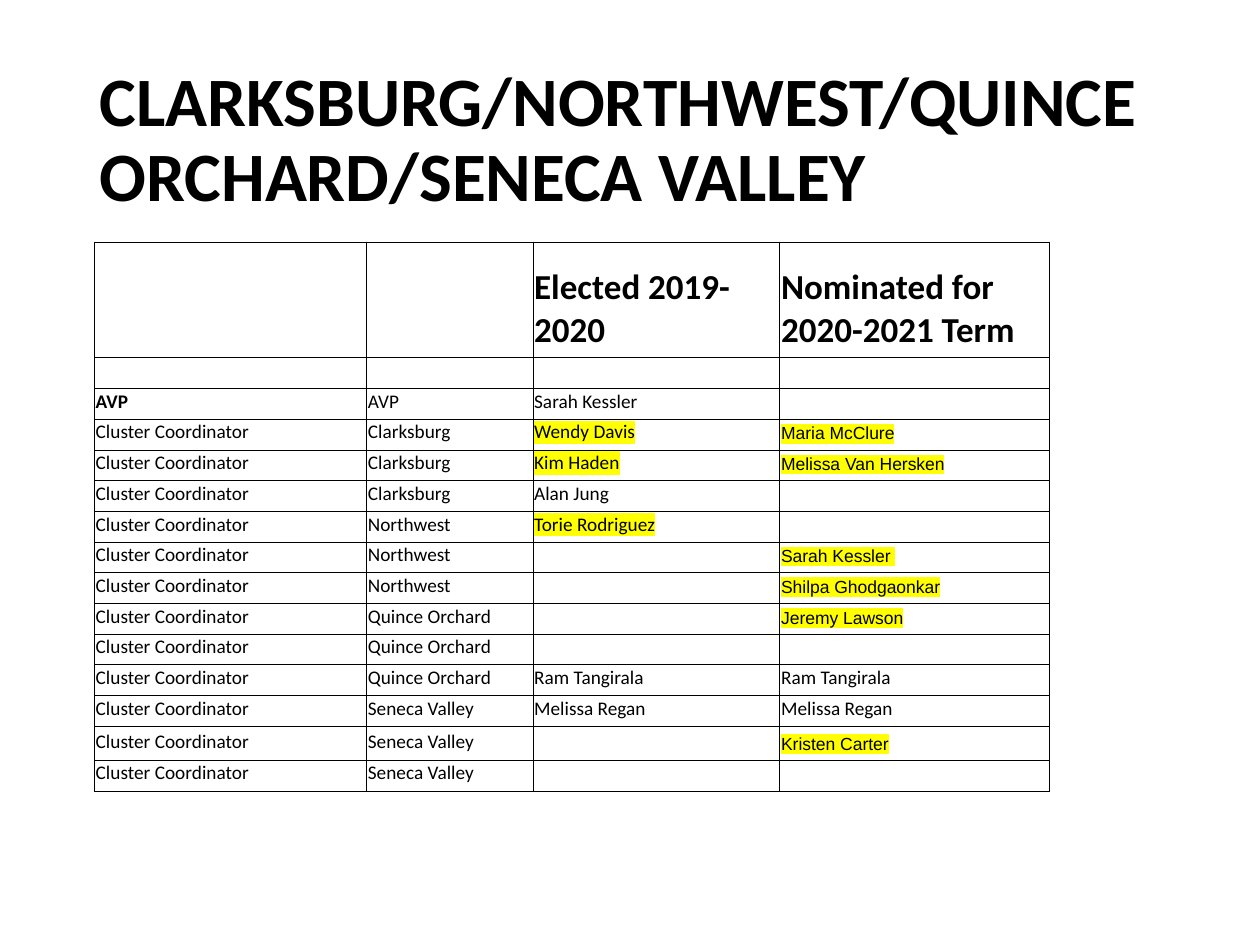
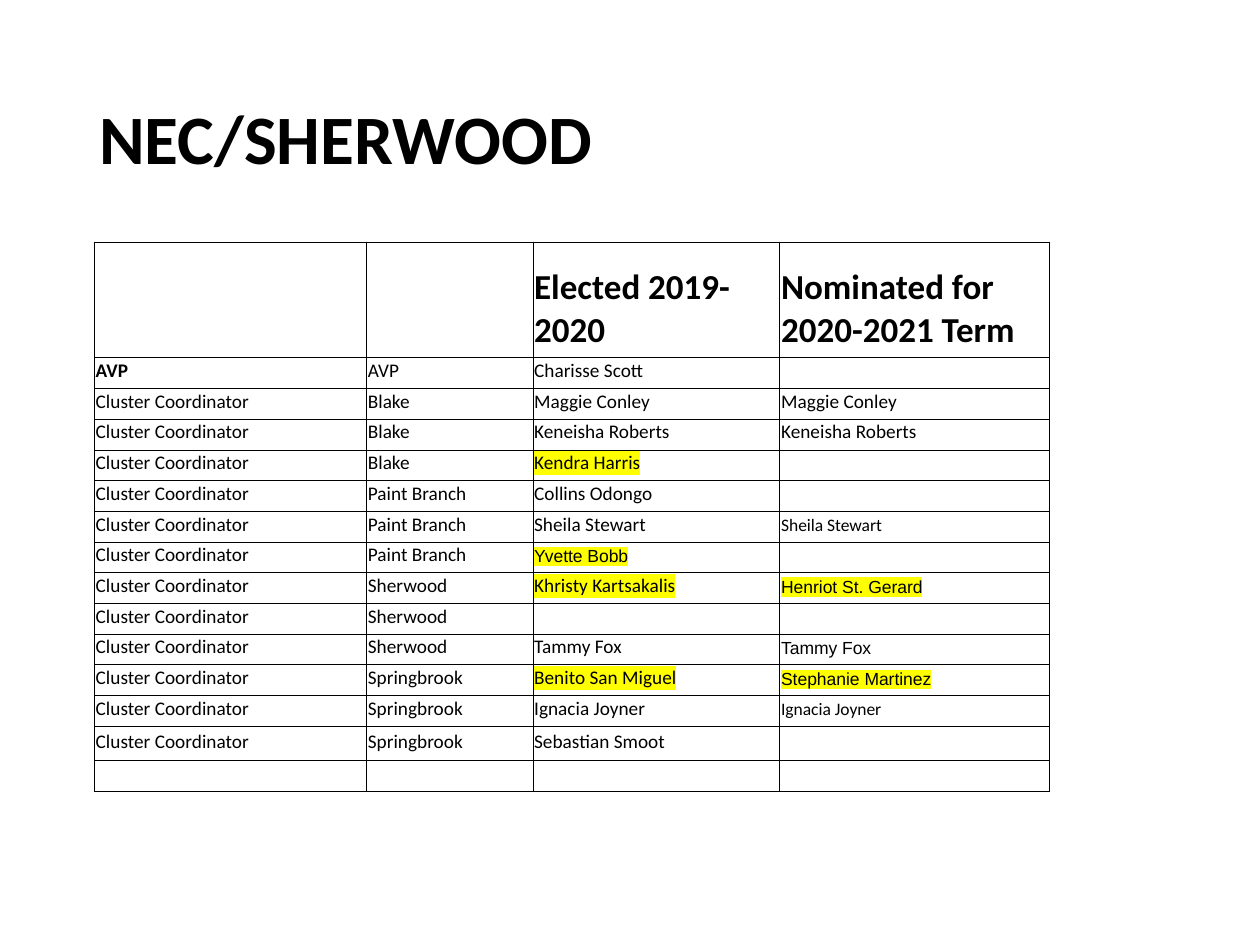
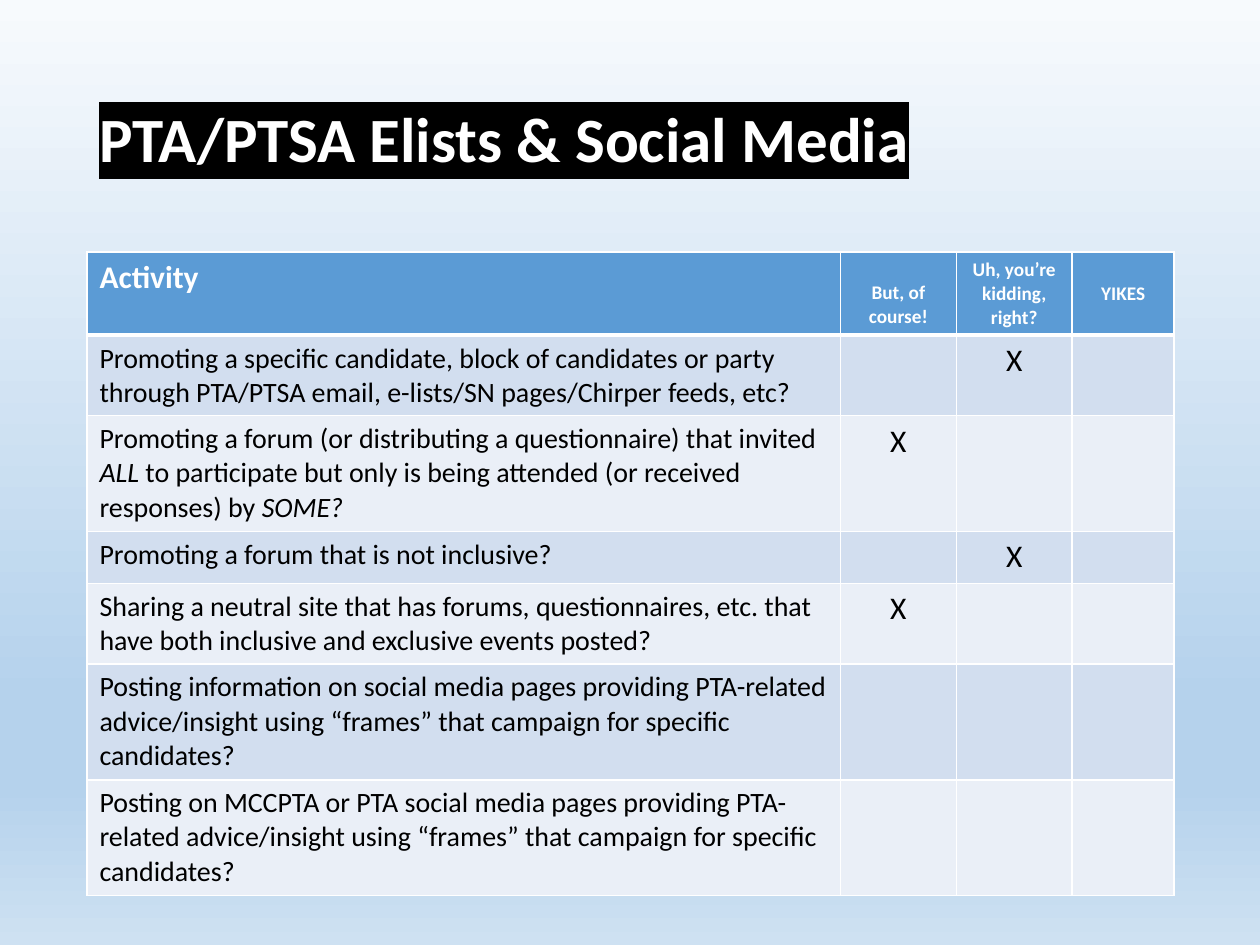
from dataclasses import dataclass
from lxml.etree import SubElement as Sub
from pptx import Presentation
from pptx.dml.color import RGBColor as RGB
from pptx.enum.text import MSO_ANCHOR as Anchor, PP_ALIGN as Align
from pptx.oxml.ns import qn
from pptx.util import Inches, Pt


@dataclass(frozen=True)
class Theme:
    sans: str = "Calibri"
    alt: str = "Arial"
    ink: str = "000000"
    paper: str = "FFFFFF"
    glow: str = "FFFF00"
    head: str = "5B9BD5"
    bands: tuple = ("D2DEEF", "EAEFF7")
    sky: tuple = ((0, "F7FAFD"), (74, "B5D2EC"), (83, "B5D2EC"), (100, "CEE1F2"))
    title: float = 39.6
    banner: int = 36
    term: int = 20
    lead: int = 18
    ask: int = 16
    body: int = 11
    small: int = 10


T = Theme()
TITLE = (0.69, 0.4, 8.62, 1.45)
ROSTER = (0.75, 1.92, 7.58, 4.31)
QUIZ = (0.69, 2, 8.62, 5.02)

# Name styles in the rosters
HOT = dict(mark=T.glow)
ALT = dict(face=T.alt, size=T.small)
HOT_ALT = HOT | ALT
SMALL = dict(size=T.small)


def put(frame, text, size=T.body, face=T.sans, color=T.ink, bold=False,
        mark=None, align=Align.LEFT, space=None):
    """Write text, or a list of (text, italic) parts, as one paragraph."""
    para = frame.paragraphs[0]
    para.alignment = align
    if space:
        para.line_spacing = space
    if not text:
        Sub(para._p, qn("a:endParaRPr"), sz=str(size * 100))
        return
    parts = [(text, False)] if isinstance(text, str) else text
    for words, slant in parts:
        run = para.add_run()
        run.text = words
        font = run.font
        font.size, font.bold, font.italic = Pt(size), bold, slant
        font.color.rgb = RGB.from_string(color)
        if mark:
            glow = Sub(run._r.get_or_add_rPr(), qn("a:highlight"))
            Sub(glow, qn("a:srgbClr"), val=mark)
        font.name = face


def edge(cell, color, width, base=None):
    """Draw the four borders; base is the width of the lower one."""
    props = cell._tc.get_or_add_tcPr()
    for spot, side in enumerate("LRTB"):
        pen = base if side == "B" and base else width
        line = Sub(props, qn(f"a:ln{side}"), w=str(Pt(pen)))
        Sub(Sub(line, qn("a:solidFill")), qn("a:srgbClr"), val=color)
        props.insert(spot, line)


def tint(cell, color):
    cell.fill.solid()
    cell.fill.fore_color.rgb = RGB.from_string(color)


def grid(slide, box, cols, rows):
    """Add a plain table with the given column widths and row heights."""
    table = slide.shapes.add_table(len(rows), len(cols), *map(Inches, box)).table
    table.horz_banding = table.first_row = False
    for col, wide in zip(table.columns, cols):
        col.width = Inches(wide)
    for row, high in zip(table.rows, rows):
        row.height = Inches(high)
    return table


def head(slide, box, text, **form):
    shape = slide.shapes.add_textbox(*map(Inches, box))
    frame = shape.text_frame
    frame.word_wrap = True
    frame.vertical_anchor = Anchor.MIDDLE
    put(frame, text, bold=True, space=0.9, **form)


def roster(slide, box, rows):
    """Nominee table; a cell is text or (text, style)."""
    high = [0.92] + [0.24] * 12 + [0.27, 0.24]
    table = grid(slide, box, (2.16, 1.32, 1.96, 2.14), high)
    term = dict(size=T.term, bold=True)
    top = ["", "", ("Elected 2019-2020", term),
           ("Nominated for 2020-2021 Term", term)]
    for r, row in enumerate([top] + rows):
        for c, item in enumerate(row):
            text, form = (item, {}) if isinstance(item, str) else item
            cell = table.cell(r, c)
            cell.margin_left = cell.margin_right = cell.margin_top = Inches(0.01)
            cell.margin_bottom = Inches(0.05)
            cell.vertical_anchor = Anchor.BOTTOM
            tint(cell, T.paper)
            edge(cell, T.ink, 0.5)
            put(cell.text_frame, text, **form)


def chair(name):
    return [("AVP", dict(bold=True)), "AVP", name, ""]


def seats(schools, names):
    """Three coordinator rows for each school."""
    return [["Cluster Coordinator", schools[i // 3], *pair]
            for i, pair in enumerate(names)]


def quiz(slide, box, asks):
    """Activity table; each ask has its text and the column of its X."""
    high = (0.66, 0.64, 0.92, 0.41, 0.64, 0.92, 0.92)
    table = grid(slide, box, (5.98, 0.92, 0.92, 0.81), high)

    # Header row
    tops = (("Activity", T.lead, Align.LEFT, Anchor.TOP),
            ("But, of course!", T.body, Align.CENTER, Anchor.BOTTOM),
            ("Uh, you’re kidding, right?", T.body, Align.CENTER, Anchor.TOP),
            ("YIKES", T.body, Align.CENTER, Anchor.MIDDLE))
    for c, (text, size, align, anchor) in enumerate(tops):
        cell = table.cell(0, c)
        cell.vertical_anchor = anchor
        tint(cell, T.head)
        edge(cell, T.paper, 1, base=3)
        put(cell.text_frame, text, size=size, color=T.paper, bold=True, align=align)

    # Banded rows
    for r, (text, pick) in enumerate(asks, 1):
        for c in range(4):
            cell = table.cell(r, c)
            tint(cell, T.bands[(r - 1) % 2])
            edge(cell, T.paper, 1)
            if c == 0:
                put(cell.text_frame, text, size=T.ask)
            else:
                put(cell.text_frame, "X" if c == pick else "", size=T.lead,
                    align=Align.CENTER)


def sky(slide):
    """Fill the background with the vertical gradient."""
    fill = slide.background.fill
    fill.gradient()
    fill.gradient_angle = 270
    stops = next(slide._element.iter(qn("a:gsLst")))
    for stop in list(stops):
        stops.remove(stop)
    for pos, color in T.sky:
        Sub(Sub(stops, qn("a:gs"), pos=str(pos * 1000)), qn("a:srgbClr"), val=color)


WEST = [[""] * 4, chair("Sarah Kessler")] + seats(
    ("Clarksburg", "Northwest", "Quince Orchard", "Seneca Valley"),
    [(("Wendy Davis", HOT), ("Maria McClure", HOT_ALT)),
     (("Kim Haden", HOT), ("Melissa Van Hersken", HOT_ALT)),
     ("Alan Jung", ""),
     (("Torie Rodriguez", HOT), ""),
     ("", ("Sarah Kessler ", HOT_ALT)),
     ("", ("Shilpa Ghodgaonkar", HOT_ALT)),
     ("", ("Jeremy Lawson", HOT_ALT)),
     ("", ""),
     ("Ram Tangirala", "Ram Tangirala"),
     ("Melissa Regan", "Melissa Regan"),
     ("", ("Kristen Carter", HOT_ALT)),
     ("", "")])

EAST = [chair("Charisse Scott")] + seats(
    ("Blake", "Paint Branch", "Sherwood", "Springbrook"),
    [("Maggie Conley", "Maggie Conley"),
     ("Keneisha Roberts", "Keneisha Roberts"),
     (("Kendra Harris", HOT), ""),
     ("Collins Odongo", ""),
     ("Sheila Stewart", ("Sheila Stewart", SMALL)),
     (("Yvette Bobb", HOT_ALT), ""),
     (("Khristy Kartsakalis", HOT), ("Henriot St. Gerard", HOT_ALT)),
     ("", ""),
     ("Tammy Fox", ("Tammy Fox", ALT)),
     (("Benito San Miguel", HOT), ("Stephanie Martinez", HOT_ALT)),
     ("Ignacia Joyner", ("Ignacia Joyner", SMALL)),
     ("Sebastian Smoot", "")]) + [[""] * 4]

ASKS = [
    ("Promoting a specific candidate, block of candidates or party through "
     "PTA/PTSA email, e-lists/SN pages/Chirper feeds, etc?", 2),
    ([("Promoting a forum (or distributing a questionnaire) that invited ", False),
      ("ALL", True),
      (" to participate but only is being attended (or received responses) by ", False),
      ("SOME?", True)], 1),
    ("Promoting a forum that is not inclusive?", 2),
    ("Sharing a neutral site that has forums, questionnaires, etc. that have "
     "both inclusive and exclusive events posted?", 1),
    ("Posting information on social media pages providing PTA-related "
     "advice/insight using “frames” that campaign for specific candidates?", None),
    ("Posting on MCCPTA or PTA social media pages providing PTA-related "
     "advice/insight using “frames” that campaign for specific candidates?", None),
]


def main():
    deck = Presentation()
    deck.slide_width, deck.slide_height = Inches(10), Inches(7.5)
    blank = deck.slide_layouts[6]

    # Roster slides
    for title, rows in (("CLARKSBURG/NORTHWEST/QUINCE ORCHARD/SENECA VALLEY", WEST),
                        ("NEC/SHERWOOD", EAST)):
        slide = deck.slides.add_slide(blank)
        head(slide, TITLE, title, size=T.title)
        roster(slide, ROSTER, rows)

    # Social media slide
    slide = deck.slides.add_slide(blank)
    sky(slide)
    head(slide, TITLE, "PTA/PTSA Elists & Social Media", size=T.banner,
         color=T.paper, mark=T.ink)
    quiz(slide, QUIZ, ASKS)
    deck.save("out.pptx")


if __name__ == "__main__":
    main()
